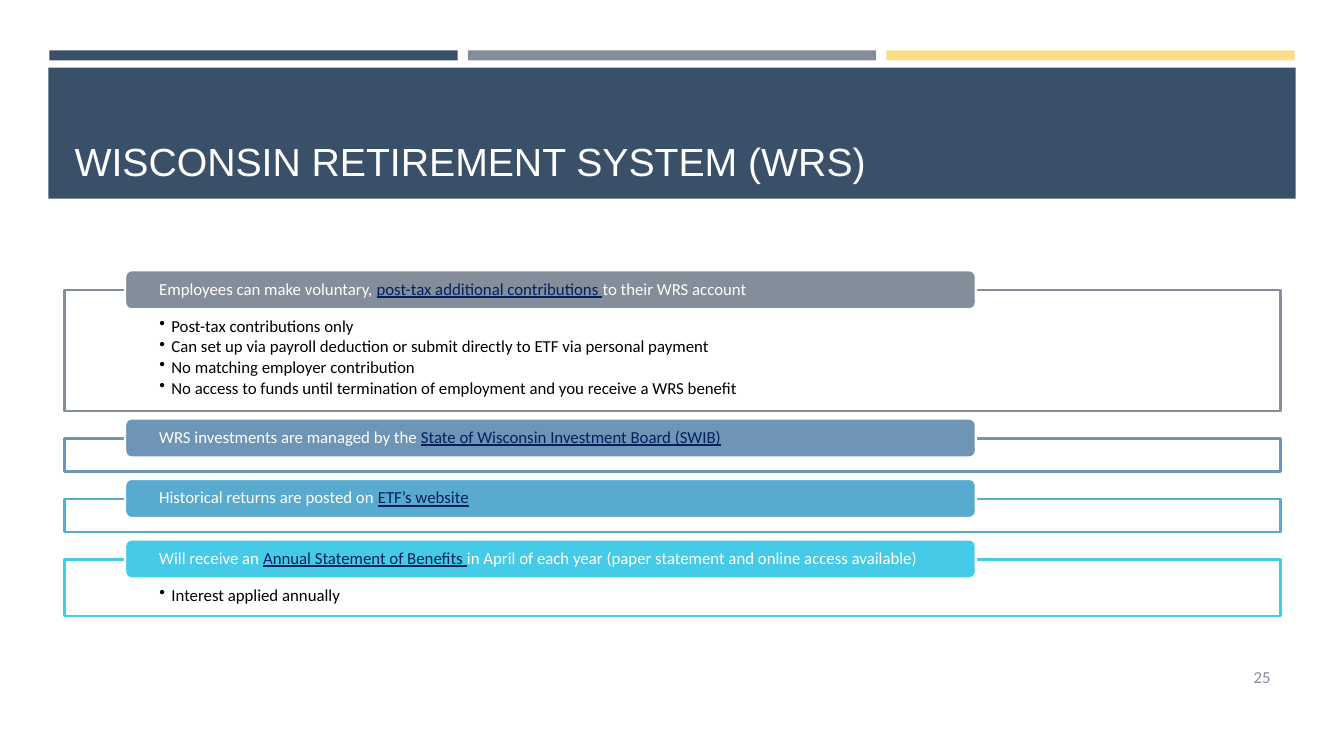
"""Builds the Wisconsin Retirement System slide with four labelled panels."""
import pptx
import pptx.dml.color
import pptx.enum.shapes
import pptx.enum.text
import pptx.oxml.ns
import pptx.util
from lxml import etree

PX = 9144
THEME = {
    "navy": "3A5068", "gray": "848D9A", "yellow": "F8DF88",
    "steel": "6E95B5", "sky": "59AACF", "cyan": "45CBE8",
    "white": "FFFFFF", "title": "FFFEFF", "link": "002060", "black": "000000",
    "title_font": "Arial", "body_font": "Calibri",
    "title_size": 28, "body_size": 12, "outline": 1.75,
}
SHAPES = pptx.enum.shapes.MSO_SHAPE
ANCHOR = pptx.enum.text.MSO_ANCHOR
ALIGN = pptx.enum.text.PP_ALIGN


def color(name):
    return pptx.dml.color.RGBColor.from_string(THEME[name])


def add_block(page, kind, bounds, fill, outline=None, insets=(10, 5, 10, 5)):
    block = page.shapes.add_shape(kind, *[value * PX for value in bounds])
    block.shadow.inherit = False
    block.fill.solid()
    block.fill.fore_color.rgb = color(fill)
    if outline:
        block.line.color.rgb = color(outline)
        block.line.width = pptx.util.Pt(THEME["outline"])
    else:
        block.line.fill.background()
    frame = block.text_frame
    frame.word_wrap = True
    frame.margin_left, frame.margin_top, frame.margin_right, frame.margin_bottom = [
        value * PX for value in insets]
    return block


deck = pptx.Presentation()
deck.slide_width, deck.slide_height = 1333 * PX, 750 * PX
page = deck.slides.add_slide(deck.slide_layouts[5])

for index, bar_color in enumerate(["navy", "gray", "yellow"]):
    add_block(page, SHAPES.RECTANGLE, (49 + 415 * index, 50, 405, 10), bar_color)
band = add_block(page, SHAPES.RECTANGLE, (48, 67, 1237, 130), "navy")

title = page.shapes.title
band._element.addnext(title._element)
title.left, title.top, title.width, title.height = [
    value * PX for value in (64, 77, 1206, 111)]
title.text_frame.text = "WISCONSIN RETIREMENT SYSTEM (WRS)"
title.text_frame.vertical_anchor = ANCHOR.BOTTOM
heading = title.text_frame.paragraphs[0]
heading.alignment = ALIGN.LEFT
heading.font.name = THEME["title_font"]
heading.font.size = pptx.util.Pt(THEME["title_size"])
heading.font.color.rgb = color("title")

number_box = page.shapes.add_textbox(*[value * PX for value in (1155, 651, 115, 40)])
number_box.text_frame.word_wrap = True
number_box.text_frame.vertical_anchor = ANCHOR.MIDDLE
number = number_box.text_frame.paragraphs[0]
number.text = "25"
number.alignment = ALIGN.RIGHT
number.space_after = pptx.util.Pt(6)
number.font.name = THEME["body_font"]
number.font.size = pptx.util.Pt(THEME["body_size"])
number.font.color.rgb = color("gray")

panels = [
    ("gray", 120,
     ("Employees can make voluntary, ", "post-tax additional contributions ",
      "to their WRS account"),
     ["Post-tax contributions only",
      "Can set up via payroll deduction or submit directly to ETF via personal payment",
      "No matching employer contribution",
      "No access to funds until termination of employment and you receive a WRS benefit"]),
    ("steel", 33,
     ("WRS investments are managed by the ",
      "State of Wisconsin Investment Board (SWIB)"), []),
    ("sky", 33, ("Historical returns are posted on ", "ETF’s website"), []),
    ("cyan", 56,
     ("Will receive an ", "Annual Statement of Benefits ",
      "in April of each year (paper statement and online access available)"),
     ["Interest applied annually"]),
]
panel_top, panel_gap = 288, 27

for accent, height, label, points in panels:
    body = add_block(page, SHAPES.RECTANGLE, (64, panel_top, 1206, height),
                     "white", accent, (94, 27, 94, 9))
    fill_color = body._element.spPr.find(
        pptx.oxml.ns.qn("a:solidFill")).find(pptx.oxml.ns.qn("a:srgbClr"))
    etree.SubElement(fill_color, pptx.oxml.ns.qn("a:alpha"), val="90000")
    body.text_frame.vertical_anchor = ANCHOR.TOP
    for index, point in enumerate(points):
        para = body.text_frame.paragraphs[0] if index == 0 else body.text_frame.add_paragraph()
        para.text = point
        para.alignment = ALIGN.LEFT
        para.line_spacing = 0.9
        para.space_after = pptx.util.Pt(1.8)
        properties = para._p.get_or_add_pPr()
        properties.set("marL", str(12 * PX))
        properties.set("indent", str(-12 * PX))
        etree.SubElement(properties, pptx.oxml.ns.qn("a:buChar"), char="•")
        para.font.name = THEME["body_font"]
        para.font.size = pptx.util.Pt(THEME["body_size"])
        para.font.color.rgb = color("black")

    tab = add_block(page, SHAPES.ROUNDED_RECTANGLE, (124, panel_top - 20, 844, 39),
                    accent, "white", (32, 0, 32, 0))
    tab.text_frame.vertical_anchor = ANCHOR.MIDDLE
    para = tab.text_frame.paragraphs[0]
    para.alignment = ALIGN.LEFT
    para.line_spacing = 0.9
    para.font.name = THEME["body_font"]
    para.font.size = pptx.util.Pt(THEME["body_size"])
    for index, words in enumerate(label):
        span = para.add_run()
        span.text = words
        span.font.color.rgb = color("link" if index == 1 else "white")
        span.font.underline = index == 1
    panel_top += height + panel_gap

deck.save("out.pptx")
